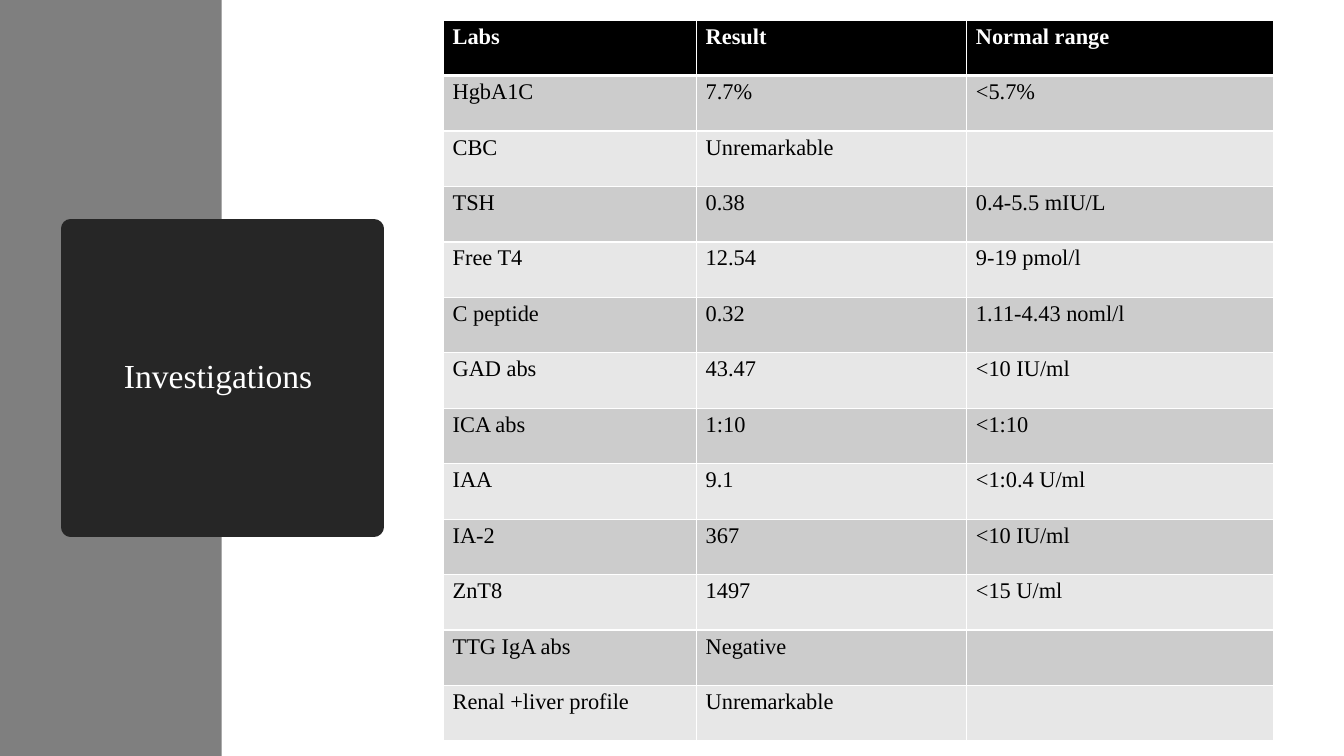
from lxml.etree import SubElement
from pptx import Presentation
from pptx.dml.color import RGBColor
from pptx.enum.shapes import MSO_SHAPE
from pptx.enum.text import MSO_ANCHOR, PP_ALIGN
from pptx.oxml.ns import qn
from pptx.util import Inches, Pt

FONT = "Times New Roman"
COLORS = {
    "white": "FFFFFF",
    "black": "000000",
    "band": "7F7F7F",
    "title": "262626",
    "odd_row": "CCCCCC",
    "even_row": "E7E7E7",
}
COLUMN_WIDTHS = (2.51, 2.68, 3.04)
ROW_HEIGHT = 0.55
LABS = (
    ("Labs", "Result", "Normal range"),
    ("HgbA1C", "7.7%", "<5.7%"),
    ("CBC", "Unremarkable", ""),
    ("TSH", "0.38", "0.4-5.5 mIU/L"),
    ("Free T4", "12.54", "9-19 pmol/l"),
    ("C peptide", "0.32", "1.11-4.43 noml/l"),
    ("GAD abs", "43.47", "<10 IU/ml"),
    ("ICA abs", "1:10", "<1:10"),
    ("IAA", "9.1", "<1:0.4 U/ml"),
    ("IA-2", "367", "<10 IU/ml"),
    ("ZnT8", "1497", "<15 U/ml"),
    ("TTG IgA abs", "Negative", ""),
    ("Renal +liver profile", "Unremarkable", ""),
)


def color(name):
    """Return the named colour."""
    return RGBColor.from_string(COLORS[name])


def paint(target, name):
    """Fill a shape or a cell with a solid colour."""
    target.fill.solid()
    target.fill.fore_color.rgb = color(name)


def add_run(paragraph, text, size, color_name, bold=False):
    """Add one formatted run to a paragraph."""
    run = paragraph.add_run()
    run.text = text
    run.font.name = FONT
    run.font.size = Pt(size)
    run.font.bold = bold
    run.font.color.rgb = color(color_name)


def add_block(slide, left, top, width, height, fill):
    """Add a plain rectangle without outline or shadow."""
    shape = slide.shapes.add_shape(
        MSO_SHAPE.RECTANGLE, Inches(left), Inches(top), Inches(width), Inches(height)
    )
    shape.shadow.inherit = False
    paint(shape, fill)
    shape.line.fill.background()
    return shape


def add_title(slide, text):
    """Add the dark title block with its thick, round-joined outline."""
    shape = add_block(slide, 0.7, 2.27, 3.01, 2.96, "title")
    shape.line.color.rgb = color("title")
    shape.line.width = Pt(13.75)
    SubElement(shape.line._get_or_add_ln(), qn("a:round"))
    frame = shape.text_frame
    frame.word_wrap = True
    frame.vertical_anchor = MSO_ANCHOR.MIDDLE
    paragraph = frame.paragraphs[0]
    paragraph.alignment = PP_ALIGN.CENTER
    paragraph.line_spacing = 0.9
    add_run(paragraph, text, 24, "white")


def set_borders(cell, top, bottom):
    """Draw white borders around a cell, with widths in points."""
    properties = cell._tc.get_or_add_tcPr()
    for side, width in (("L", 1), ("R", 1), ("T", top), ("B", bottom)):
        line = SubElement(properties, qn(f"a:ln{side}"), w=str(Pt(width)))
        fill = SubElement(line, qn("a:solidFill"))
        SubElement(fill, qn("a:srgbClr"), val=COLORS["white"])


def fill_cell(cell, text, row_index):
    """Write and style one cell according to its row."""
    is_header = row_index == 0
    set_borders(cell, 3 if row_index == 1 else 1, 3 if is_header else 1)
    paint(cell, "black" if is_header else "odd_row" if row_index % 2 else "even_row")
    cell.margin_left = cell.margin_right = Inches(0.09)
    cell.margin_top = cell.margin_bottom = Inches(0.04)
    if text:
        text_color = "white" if is_header else "black"
        add_run(cell.text_frame.paragraphs[0], text, 16, text_color, is_header)


def add_labs_table(slide, left, top):
    """Add the table of laboratory results."""
    table = slide.shapes.add_table(
        len(LABS), len(COLUMN_WIDTHS), Inches(left), Inches(top),
        Inches(sum(COLUMN_WIDTHS)), Inches(ROW_HEIGHT * len(LABS)),
    ).table
    for column, width in zip(table.columns, COLUMN_WIDTHS):
        column.width = Inches(width)
    for row_index, values in enumerate(LABS):
        table.rows[row_index].height = Inches(ROW_HEIGHT)
        for column_index, text in enumerate(values):
            fill_cell(table.cell(row_index, column_index), text, row_index)


def main():
    """Build and save the investigations slide."""
    presentation = Presentation()
    presentation.slide_width = Inches(13.33)
    presentation.slide_height = Inches(7.5)
    slide = presentation.slides.add_slide(presentation.slide_layouts[6])
    add_block(slide, 0, 0, 2.2, 7.5, "band")
    add_title(slide, "Investigations ")
    add_labs_table(slide, 4.4, 0.2)
    presentation.save("out.pptx")


if __name__ == "__main__":
    main()
